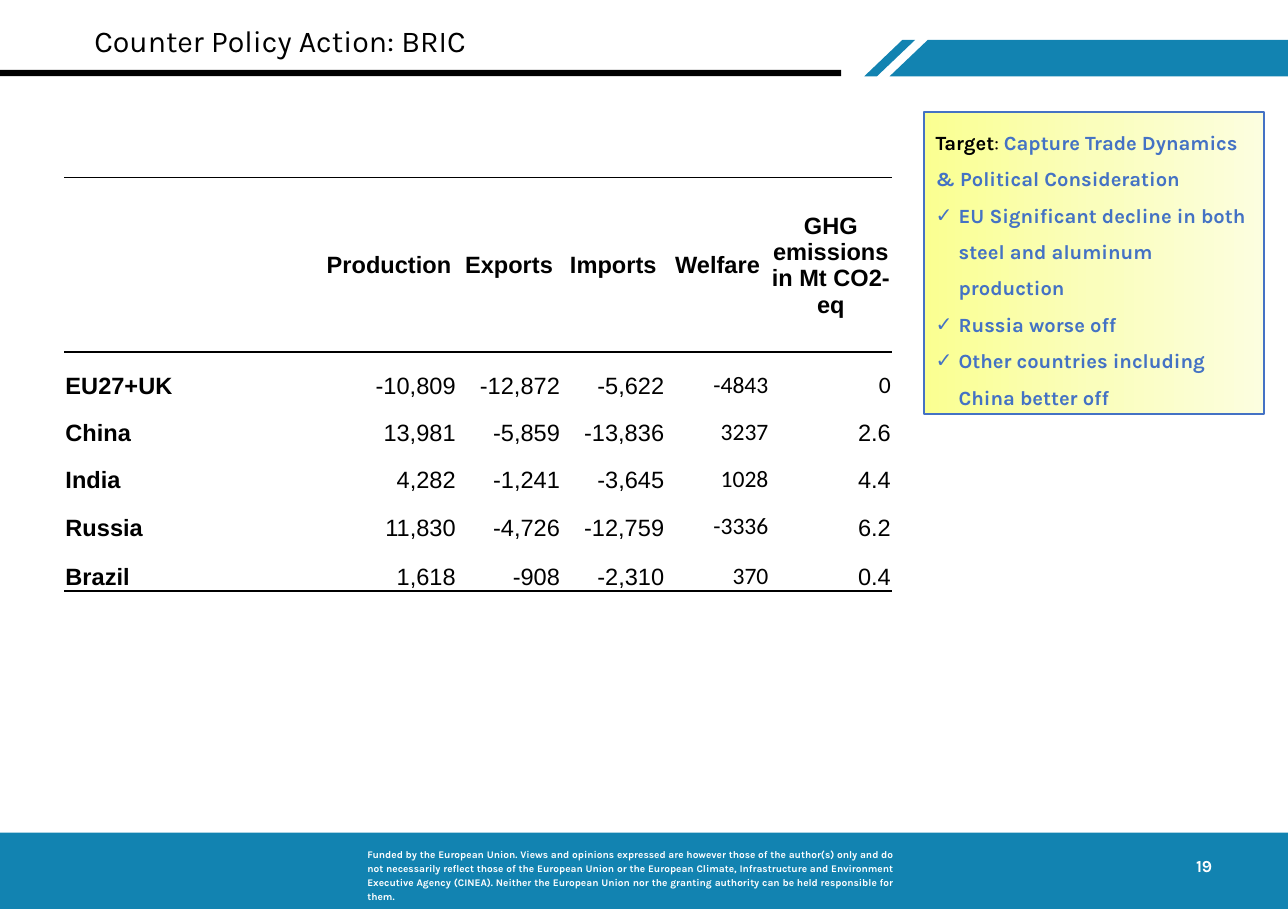
from copy import deepcopy
from dataclasses import dataclass

from lxml import etree
from pptx import Presentation
from pptx.dml.color import RGBColor
from pptx.enum.shapes import MSO_SHAPE
from pptx.enum.text import MSO_ANCHOR, PP_ALIGN
from pptx.oxml.ns import qn
from pptx.util import Emu, Inches, Pt

RECTANGLE = MSO_SHAPE.RECTANGLE
TOP, MIDDLE, BOTTOM = MSO_ANCHOR.TOP, MSO_ANCHOR.MIDDLE, MSO_ANCHOR.BOTTOM
LEFT, CENTER, RIGHT, JUSTIFY = PP_ALIGN.LEFT, PP_ALIGN.CENTER, PP_ALIGN.RIGHT, PP_ALIGN.JUSTIFY

SLIDE_W, SLIDE_H = Pt(765), Pt(540)
COLORS = {
    "teal": "1283B1", "black": "000000", "white": "FFFFFF", "blue": "4472C4",
    "yellow": "FAFF91", "pale yellow": "FAFEBC", "cream": "FCFEDF",
}

HEADINGS = ["", "Production", "Exports", "Imports", "Welfare", "GHG emissions in Mt CO2-eq"]
COUNTRIES = [
    ["EU27+UK", "-10,809", "-12,872", "-5,622", "-4843", "0"],
    ["China", "13,981", "-5,859", "-13,836", "3237", "2.6"],
    ["India", "4,282", "-1,241", "-3,645", "1028", "4.4"],
    ["Russia", "11,830", "-4,726", "-12,759", "-3336", "6.2"],
    ["Brazil", "1,618", "-908", "-2,310", "370", "0.4"],
]
COLUMN_WEIGHTS = [2.12, 1.12, 0.86, 0.86, 0.86, 1.01]
ROW_WEIGHTS = [1.44, 0.39, 0.39, 0.39, 0.39, 0.41]
CALIBRI_CELLS = {(row, 4) for row in range(1, 6)} | {(1, 5)}

FINDINGS = [
    "EU Significant decline in both steel and aluminum production",
    "Russia worse off",
    "Other countries including China better off",
]
DISCLAIMER = (
    "Funded by the European Union. Views and opinions expressed are however those of the "
    "author(s) only and do not necessarily reflect those of the European Union or the European "
    "Climate, Infrastructure and Environment Executive Agency (CINEA). Neither the European Union "
    "nor the granting authority can be held responsible for them."
)


@dataclass
class Box:
    """A rectangle in percent of the slide's width and height."""
    left: float
    top: float
    width: float
    height: float

    def emu(self):
        """Return left, top, width and height as lengths."""
        return (Emu(int(SLIDE_W * self.left / 100)), Emu(int(SLIDE_H * self.top / 100)),
                Emu(int(SLIDE_W * self.width / 100)), Emu(int(SLIDE_H * self.height / 100)))


def rgb(name):
    """Look up a colour of the slide."""
    return RGBColor.from_string(COLORS[name])


def style(font, size, color, bold=False, name="Karla"):
    """Set the face, size, weight and colour of a font."""
    font.name, font.size, font.bold = name, Pt(size), bold
    font.color.rgb = rgb(color)


def paint(shape, color):
    """Give a shape a flat fill without line or shadow."""
    shape.fill.solid()
    shape.fill.fore_color.rgb = rgb(color)
    shape.line.fill.background()
    shape.shadow.inherit = False


def add_bar(slide, box, color):
    """Draw a plain bar that fills the box."""
    paint(slide.shapes.add_shape(RECTANGLE, *box.emu()), color)


def add_label(slide, box, text, size, color, bold=False, align=LEFT, anchor=TOP):
    """Write one paragraph in the box and return its frame."""
    frame = slide.shapes.add_textbox(*box.emu()).text_frame
    frame.word_wrap = True
    frame.vertical_anchor = anchor
    paragraph = frame.paragraphs[0]
    paragraph.text, paragraph.alignment = text, align
    style(paragraph.font, size, color, bold)
    return frame


def add_ribbon(slide, box):
    """Draw the slanted stripe and the long slanted band in the box."""
    left, top, width, height = box.emu()
    slant, stripe, band = 0.09, 0.03, 0.06
    outlines = [
        [(0, 1), (slant, 0), (slant + stripe, 0), (stripe, 1)],
        [(band, 1), (band + slant, 0), (1, 0), (1, 1)],
    ]
    for outline in outlines:
        points = [(left + int(x * width), top + int(y * height)) for x, y in outline]
        builder = slide.shapes.build_freeform(*points[0])
        builder.add_line_segments(points[1:], close=True)
        paint(builder.convert_to_shape(), "teal")


def add_header(slide, title):
    """Draw the title with its rule and ribbon."""
    add_ribbon(slide, Box(67.1, 4.4, 32.9, 4))
    add_bar(slide, Box(0, 7.7, 65.3, 0.67), "black")
    add_label(slide, Box(6.4, 1.73, 57.9, 6.4), title, 18, "black")


def add_footer(slide, box, number):
    """Draw the footer bar with the disclaimer and the page number."""
    add_bar(slide, box, "teal")
    disclaimer = add_label(slide, Box(27.59, box.top + 0.93, 42.66, box.height - 0.93),
                           DISCLAIMER, 6, "white", True, JUSTIFY)
    disclaimer.paragraphs[0].line_spacing = 1.15
    page = add_label(slide, Box(91.86, box.top + 1.87, 2.73, 3.6),
                     number, 10, "white", True, RIGHT, MIDDLE)
    page.word_wrap = False
    page.margin_left = page.margin_right = page.margin_top = page.margin_bottom = Inches(0.05)


def fill_gradient(shape, colors):
    """Fill a shape from left to right with evenly spaced colours."""
    shape.fill.gradient()
    shape.fill.gradient_angle = 0
    stop_list = shape._element.spPr.find(f"{qn('a:gradFill')}/{qn('a:gsLst')}")
    while len(stop_list) < len(colors):
        stop_list.append(deepcopy(stop_list[0]))
    for index, (stop, color) in enumerate(zip(shape.fill.gradient_stops, colors)):
        stop.color.rgb = rgb(color)
        stop.position = index / (len(colors) - 1)


def add_target(slide, box):
    """Draw the yellow panel with the target and its findings."""
    panel = slide.shapes.add_shape(RECTANGLE, *box.emu())
    panel.shadow.inherit = False
    fill_gradient(panel, ["yellow", "pale yellow", "cream"])
    panel.line.color.rgb, panel.line.width = rgb("blue"), Pt(1)
    frame = panel.text_frame
    frame.word_wrap, frame.vertical_anchor = True, TOP
    target = frame.paragraphs[0]
    target.alignment, target.line_spacing = LEFT, 1.5
    for text, color, bold in [("Target", "black", True), (": ", "black", False),
                              ("Capture Trade Dynamics & Political Consideration", "blue", True)]:
        run = target.add_run()
        run.text = text
        style(run.font, 12, color, bold)
    for text in FINDINGS:
        finding = frame.add_paragraph()
        finding.text, finding.alignment, finding.line_spacing = text, LEFT, 1.5
        indent = finding._p.get_or_add_pPr()
        indent.set("marL", str(Inches(0.19)))
        indent.set("indent", str(-Inches(0.19)))
        etree.SubElement(indent, qn("a:buFont"), typeface="Arial")
        etree.SubElement(indent, qn("a:buChar"), char="✓")
        style(finding.font, 12, "blue", True)


def rule_cell(cell, ruled_edges):
    """Draw thin black rules on the named edges of a cell and clear the others."""
    properties = cell._tc.get_or_add_tcPr()
    for edge in ("lnL", "lnR", "lnT", "lnB"):
        line = etree.SubElement(properties, qn(f"a:{edge}"), w=str(Pt(1)))
        if edge in ruled_edges:
            ink = etree.SubElement(line, qn("a:solidFill"))
            etree.SubElement(ink, qn("a:srgbClr"), val=COLORS["black"])
        else:
            etree.SubElement(line, qn("a:noFill"))


def add_results(slide, box):
    """Build the table of policy effects by country."""
    records = [HEADINGS] + COUNTRIES
    left, top, width, height = box.emu()
    table = slide.shapes.add_table(len(records), len(HEADINGS), left, top, width, height).table
    table.first_row = table.horz_banding = False
    for column, weight in zip(table.columns, COLUMN_WEIGHTS):
        column.width = Emu(int(width * weight / sum(COLUMN_WEIGHTS)))
    for row, weight in zip(table.rows, ROW_WEIGHTS):
        row.height = Emu(int(height * weight / sum(ROW_WEIGHTS)))
    edges = {0: ("lnT", "lnB"), 1: ("lnT",), len(records) - 1: ("lnB",)}
    for r, record in enumerate(records):
        for c, text in enumerate(record):
            cell = table.cell(r, c)
            rule_cell(cell, edges.get(r, ()))
            cell.fill.solid()
            cell.fill.fore_color.rgb = rgb("white")
            cell.margin_left = cell.margin_right = cell.margin_top = Inches(0.01)
            cell.margin_bottom = 0
            cell.vertical_anchor = BOTTOM if r else MIDDLE
            paragraph = cell.text_frame.paragraphs[0]
            paragraph.text = text
            paragraph.alignment = CENTER if r == 0 else RIGHT if c else LEFT
            face = "Calibri" if (r, c) in CALIBRI_CELLS else "Arial"
            style(paragraph.font, 14, "black", r == 0 or c == 0, face)


def main():
    """Build the slide and save it."""
    deck = Presentation()
    deck.slide_width, deck.slide_height = SLIDE_W, SLIDE_H
    slide = deck.slides.add_slide(deck.slide_layouts[6])
    add_header(slide, "Counter Policy Action: BRIC")
    add_footer(slide, Box(0, 91.6, 100, 8.4), "19")
    add_target(slide, Box(71.72, 12.35, 26.45, 33.2))
    add_results(slide, Box(4.99, 19.55, 64.28, 45.47))
    deck.save("out.pptx")


if __name__ == "__main__":
    main()
